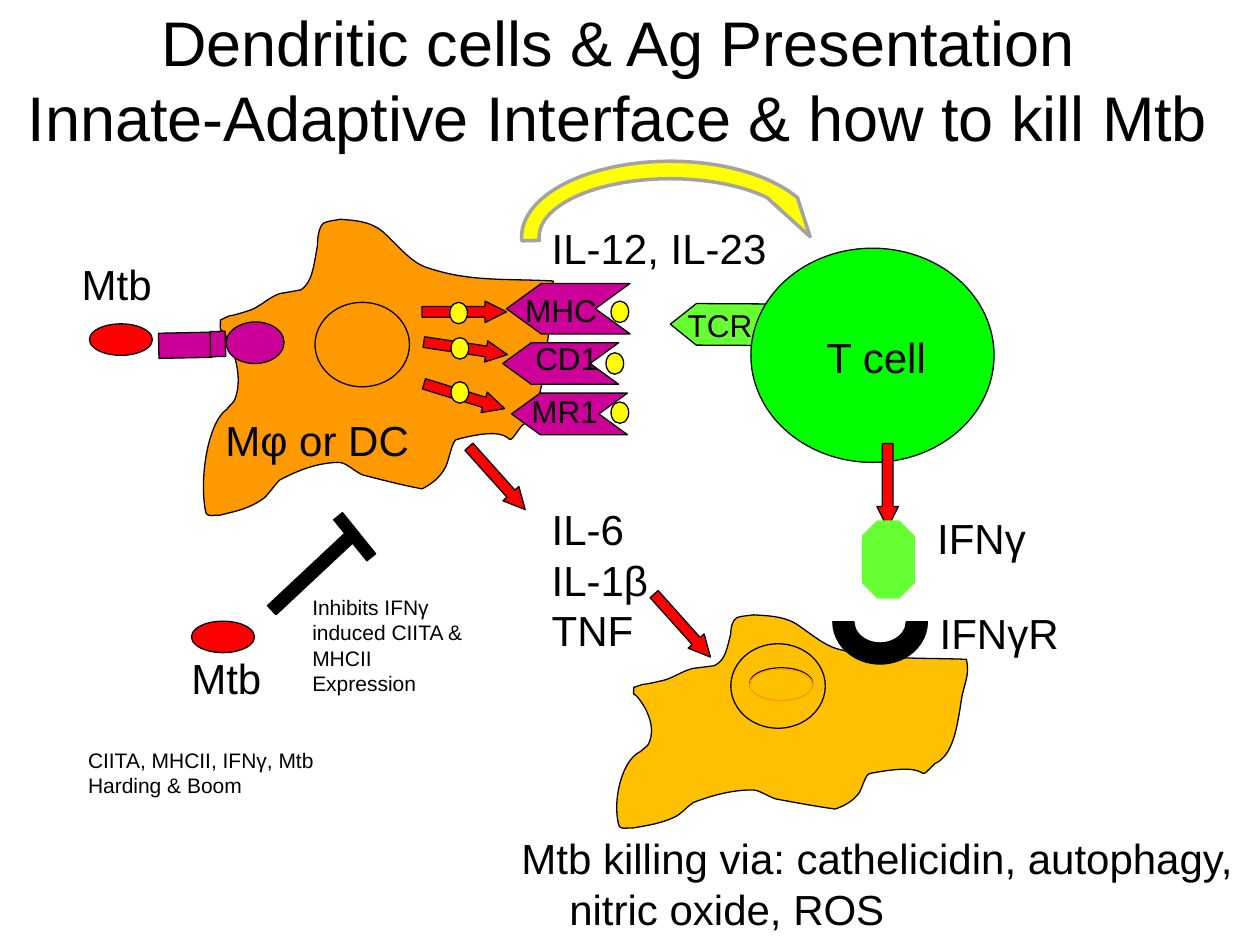
import pptx
import pptx.util
import pptx.dml.color
import pptx.enum.shapes
import pptx.enum.text
import pptx.oxml.ns
import lxml.etree

RGB = pptx.dml.color.RGBColor
MSO = pptx.enum.shapes.MSO_SHAPE
BLACK, RED, YELLOW = RGB(0, 0, 0), RGB(255, 0, 0), RGB(255, 255, 0)
ORANGE, GOLD, PURPLE = RGB(0xFF, 0x99, 0), RGB(0xFF, 0xC0, 0), RGB(0xCC, 0, 0x99)
GREEN, LIME, GREY = RGB(0, 255, 0), RGB(0x66, 255, 0x33), RGB(0xA3, 0xA3, 0xA3)

# Content; places are in inches and turned into Cm by size()
TITLE = ["Dendritic cells & Ag Presentation", "Innate-Adaptive Interface & how to kill Mtb"]

# Cell outline: start point, then cubic curves (two controls and an end each)
CELL_START = (1.75, 2.54)
CELL_CURVES = [
    (1.9, 2.47, 1.74, 2.54, 1.96, 2.47), (2.05, 2.45, 2.13, 2.36, 2.22, 2.33),
    (2.28, 2.32, 2.34, 2.31, 2.39, 2.3), (2.48, 2.24, 2.49, 2.11, 2.52, 1.95),
    (2.52, 1.89, 2.53, 1.8, 2.57, 1.77), (2.61, 1.75, 2.66, 1.75, 2.7, 1.74),
    (2.81, 1.75, 2.93, 1.75, 3.04, 1.84), (3.15, 1.94, 3.26, 2.08, 3.38, 2.12),
    (3.72, 2.24, 4.02, 2.21, 4.39, 2.23), (4.42, 2.41, 4.37, 2.5, 4.35, 2.68),
    (4.32, 2.95, 4.29, 3.29, 4.14, 3.38), (3.95, 3.64, 4.2, 3.33, 3.62, 3.49),
    (3.59, 3.5, 3.56, 3.66, 3.54, 3.7), (3.49, 3.8, 3.41, 3.85, 3.35, 3.88),
    (3.19, 3.85, 3.04, 3.81, 2.88, 3.77), (2.81, 3.74, 2.75, 3.67, 2.69, 3.67),
    (2.53, 3.67, 2.37, 3.73, 2.22, 3.81), (2.18, 3.85, 2.14, 3.91, 2.1, 3.95),
    (1.98, 4.04, 1.86, 4.06, 1.74, 4.09), (1.7, 4.08, 1.64, 4.12, 1.63, 4.05),
    (1.58, 3.77, 1.66, 3.34, 1.8, 3.25), (1.82, 3.22, 1.84, 3.21, 1.86, 3.18),
    (1.93, 3.02, 1.87, 2.81, 1.8, 2.68), (1.74, 2.56, 1.75, 2.68, 1.75, 2.54),
]
CELL_TOP = 1.74

# label, label place, chevron box, arrow place and turn, peptide on arrow, bound peptide
PRESENTERS = [
    ("CD1", (4.15, 2.64), (3.99, 2.72, 0.92, 0.33), (3.61, 2.43, 98.5), (3.58, 2.68), (4.81, 2.8)),
    ("MHC", (4.07, 2.26), (4.02, 2.25, 0.98, 0.4), (3.6, 2.14, 90), (3.57, 2.4), (4.85, 2.39)),
    ("MR1", (4.12, 3.06), (4.06, 3.12, 0.92, 0.33), (3.6, 2.81, 107.1), (3.58, 3.03), (4.85, 3.19)),
]
# Receptor of the phagocyte: preset, box
RECEPTOR = [(MSO.RECTANGLE, (1.37, 2.53, 0.2, 0.42)), (MSO.RECTANGLE, (1.63, 2.67, 0.2, 0.12)),
            (MSO.OVAL, (1.86, 2.49, 0.33, 0.46))]
BACTERIA = [(0.71, 2.57), (1.52, 4.93)]
CYTOKINE_ARROWS = [(3.86, 3.46, 138.2), (5.33, 4.63, 138.2)]
INHIBITION_BAR = [((2.42, 4.12, 0.1, 0.86), 46.9), ((2.77, 4.05, 0.09, 0.42), 141.1)]

# text, box, format
LABELS = [
    ("Mtb", (0.55, 2, 0.92, 0.5), {}),
    ("\tMφ or DC", (1.31, 3.24, 2.38, 0.52), {"hang": 0.38}),
    ("IL-6\nIL-1β\nTNF", (4.28, 3.95, 1.42, 1.31), {}),
    ("IFNγR", (7.36, 4.77, 1.17, 0.5), {}),
    ("T cell", (6.46, 2.58, 1.7, 0.51), {}),
    ("TCR", (5.36, 2.38, 1, 0.4), {"pt": 18}),
    ("IFNγ", (7.34, 4.02, 1.14, 0.5), {}),
    ("IL-12, IL-23", (4.28, 1.72, 2.38, 0.5), {}),
    ("Mtb killing via: cathelicidin, autophagy, nitric oxide, ROS",
     (4.04, 6.56, 6.56, 0.91), {"hang": 0.38}),
    ("CIITA, MHCII, IFNγ, Mtb Harding & Boom", (0.6, 5.88, 2.22, 0.5), {"pt": 12}),
    ("Mtb", (1.42, 5.13, 0.92, 0.5), {}),
    ("Inhibits IFNγ induced CIITA & MHCII Expression", (2.38, 4.67, 1.42, 0.91), {"pt": 12}),
]


def size(inches):
    return pptx.util.Cm(inches * 2.54)


def write(tf, text, pt=24, hang=0, align=None):
    tf.word_wrap = True
    tf.auto_size = pptx.enum.text.MSO_AUTO_SIZE.NONE
    for i, line in enumerate(text.split("\n")):
        p = tf.paragraphs[0] if i == 0 else tf.add_paragraph()
        p.alignment = align
        if hang:
            pPr = p._p.get_or_add_pPr()
            pPr.set("marL", str(size(hang)))
            pPr.set("indent", str(-size(hang)))
        r = p.add_run()
        r.text = line
        r.font.size, r.font.name = pptx.util.Pt(pt), "Arial"
        r.font.color.rgb = BLACK


def label(s, text, box, **fmt):
    write(s.shapes.add_textbox(*map(size, box)).text_frame, text, **fmt)


def paint(sp, fill, line=BLACK, width=0.75):
    sp.shadow.inherit = False
    if fill is None:
        sp.fill.background()
    else:
        sp.fill.solid()
        sp.fill.fore_color.rgb = fill
    if line is None:
        sp.line.fill.background()
    else:
        sp.line.color.rgb, sp.line.width = line, pptx.util.Pt(width)


def shape(s, kind, box, fill, turn=0, adj=(), **outline):
    sp = s.shapes.add_shape(kind, *map(size, box))
    sp.rotation = turn
    for i, value in enumerate(adj):
        sp.adjustments[i] = value
    paint(sp, fill, **outline)


def arrow(s, x, y, turn):
    shape(s, MSO.UP_ARROW, (x, y, 0.17, 0.67), RED, turn, (0.5, 1))


def peptide(s, x, y):
    shape(s, MSO.OVAL, (x, y, 0.14, 0.17), YELLOW)


def cell(s, fill, dx=0, top=CELL_TOP, squash=1):
    """Draw the cell outline, moved right by dx and scaled in height."""
    def place(x, y):
        return size(x + dx), size(top + (y - CELL_TOP) * squash)

    fb = s.shapes.build_freeform(*place(*CELL_START))
    fb.add_line_segments([place(*c[i:i + 2]) for c in CELL_CURVES for i in (0, 2, 4)], close=True)
    sp = fb.convert_to_shape()
    # Join each three straight segments into one cubic curve
    qn = pptx.oxml.ns.qn
    segments = list(sp._element.iter(qn("a:lnTo")))
    for i in range(0, len(segments), 3):
        curve = lxml.etree.Element(qn("a:cubicBezTo"))
        segments[i].addprevious(curve)
        for segment in segments[i:i + 3]:
            curve.append(segment[0])
            segment.getparent().remove(segment)
    paint(sp, fill)


def main():
    prs = pptx.Presentation()
    prs.slide_width, prs.slide_height = size(10), size(7.5)
    s = prs.slides.add_slide(prs.slide_layouts[5])

    # Title
    title = s.shapes.title
    title.left, title.top, title.width, title.height = map(size, (-0.22, 0, 10.25, 1.25))
    title.text_frame.vertical_anchor = pptx.enum.text.MSO_ANCHOR.MIDDLE
    write(title.text_frame, "\n".join(TITLE), pt=36, align=pptx.enum.text.PP_ALIGN.CENTER)

    # Phagocyte with its receptor and nucleus
    cell(s, ORANGE)
    for kind, box in RECEPTOR:
        shape(s, kind, box, PURPLE, 268.8)
    shape(s, MSO.OVAL, (2.5, 2.4, 0.75, 0.67), None)
    for x, y in BACTERIA:
        shape(s, MSO.OVAL, (x, y, 0.5, 0.25), RED)

    # Responding macrophage with nucleus and interferon receptor
    for x, y, turn in CYTOKINE_ARROWS:
        arrow(s, x, y, turn)
    cell(s, GOLD, dx=3.28, top=4.88, squash=0.72)
    shape(s, MSO.OVAL, (5.8, 5.11, 0.75, 0.67), None)
    shape(s, MSO.OVAL, (5.95, 5.3, 0.5, 0.25), YELLOW)
    shape(s, MSO.OVAL, (5.95, 5.31, 0.5, 0.25), GOLD, line=ORANGE)
    shape(s, MSO.BLOCK_ARC, (6.61, 4.6, 0.75, 0.67), BLACK, 180)

    # T cell, its receptor and interferon
    shape(s, MSO.PENTAGON, (5.32, 2.41, 0.83, 0.33), LIME, 180.3, (0.625,))
    shape(s, MSO.OVAL, (5.96, 1.97, 1.93, 1.7), GREEN)
    arrow(s, 6.96, 3.52, 180)
    shape(s, MSO.OCTAGON, (6.84, 4.13, 0.42, 0.62), LIME, adj=(0.293,), line=None)

    # Signal from phagocyte to T cell
    shape(s, MSO.CIRCULAR_ARROW, (4.14, 1.28, 2.36, 1.2), YELLOW,
          adj=(0.125, 11.423, 204.577, 107.066, 0.058), line=GREY, width=2)

    # Antigen presentation
    for name, at, chevron, pointer, carried, bound in PRESENTERS:
        shape(s, MSO.CHEVRON, chevron, PURPLE, 180, (0.688,))
        arrow(s, *pointer)
        peptide(s, *carried)
        label(s, name, (*at, 1, 0.4), pt=18)
        peptide(s, *bound)

    # Inhibition by Mtb
    for box, turn in INHIBITION_BAR:
        shape(s, MSO.RECTANGLE, box, BLACK, turn)

    for text, box, fmt in LABELS:
        label(s, text, box, **fmt)
    prs.save("out.pptx")


if __name__ == "__main__":
    main()
